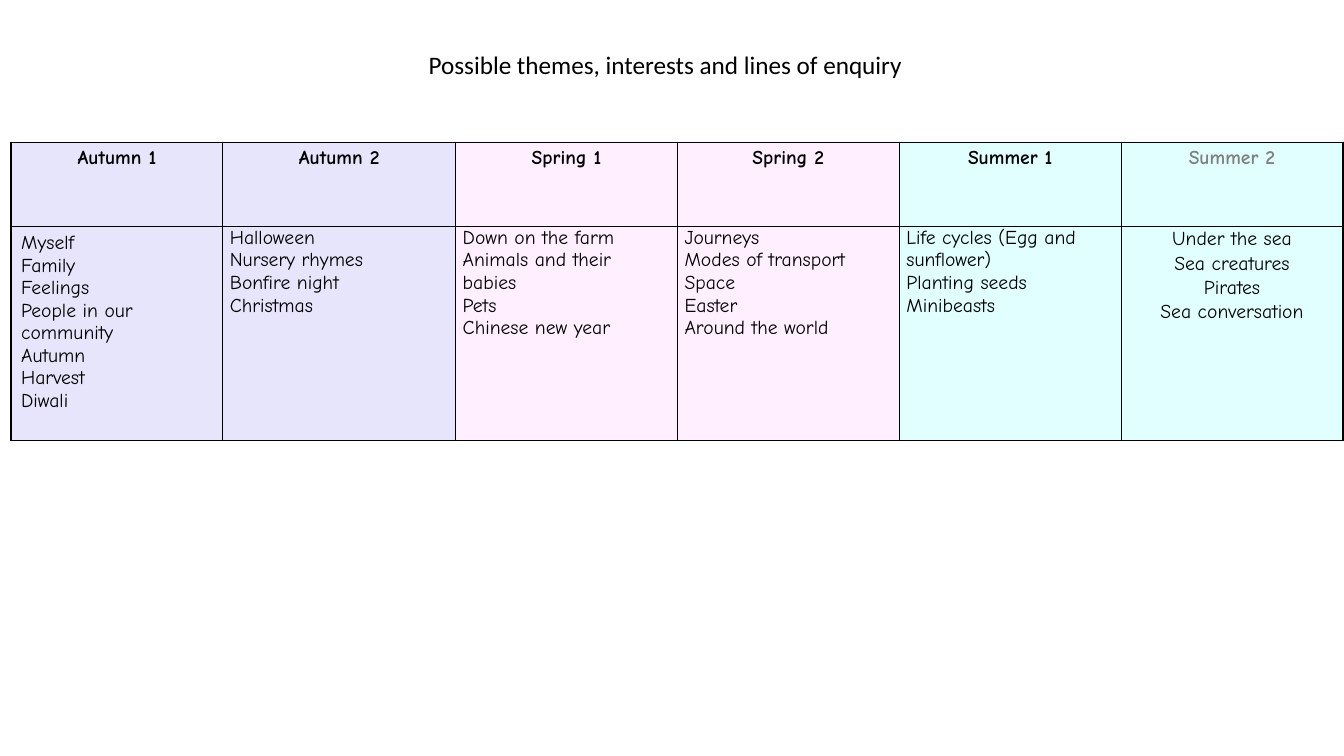
from lxml import etree
from pptx import Presentation
from pptx.dml.color import RGBColor
from pptx.enum.text import MSO_ANCHOR, PP_ALIGN
from pptx.oxml.ns import qn
from pptx.util import Inches, Pt

BLACK = RGBColor(0x00, 0x00, 0x00)
GREY = RGBColor(0x80, 0x80, 0x80)
LILAC = RGBColor(0xE6, 0xE5, 0xFB)
PINK = RGBColor(0xFF, 0xEF, 0xFF)
AQUA = RGBColor(0xE1, 0xFF, 0xFF)

COLUMN_WIDTHS = [2.1, 2.31, 2.2, 2.2, 2.2, 2.2]
ROW_HEIGHTS = [0.84, 2.12]
TERMS = [
    ("Autumn 1", LILAC, ["Myself", "Family", "Feelings", "People in our community",
                         "Autumn", "Harvest", "Diwali"]),
    ("Autumn 2", LILAC, ["Halloween", "Nursery rhymes", "Bonfire night", "Christmas"]),
    ("Spring 1", PINK, ["Down on the farm", "Animals and their babies", "Pets",
                        "Chinese new year"]),
    ("Spring 2", PINK, ["Journeys", "Modes of transport", "Space", "Easter",
                        "Around the world"]),
    ("Summer 1", AQUA, ["Life cycles (Egg and sunflower)", "Planting seeds",
                        "Minibeasts"]),
    ("Summer 2", AQUA, ["Under the sea", "Sea creatures", "Pirates",
                        "Sea conversation"]),
]


def format_paragraph(paragraph, font_name, size, color=BLACK, bold=False,
                     alignment=PP_ALIGN.LEFT):
    paragraph.alignment = alignment
    paragraph.font.name = font_name
    paragraph.font.size = Pt(size)
    paragraph.font.color.rgb = color
    paragraph.font.bold = bold


def add_borders(cell):
    properties = cell._tc.get_or_add_tcPr()
    for position, side in enumerate(("lnL", "lnR", "lnT", "lnB")):
        line = etree.Element(qn(f"a:{side}"), w=str(Pt(1)))
        fill = etree.SubElement(line, qn("a:solidFill"))
        etree.SubElement(fill, qn("a:srgbClr"), val=str(BLACK))
        properties.insert(position, line)


def fill_cell(cell, lines, background, **formatting):
    cell.fill.solid()
    cell.fill.fore_color.rgb = background
    add_borders(cell)
    cell.text = "\n".join(lines)
    for paragraph in cell.text_frame.paragraphs:
        format_paragraph(paragraph, "Comic Neue", 14, **formatting)


def add_title(slide):
    title = slide.shapes.title
    title.left, title.top = Inches(4.15), Inches(0.44)
    title.width, title.height = Inches(5.76), Inches(0.4)
    title.text_frame.text = "Possible themes, interests and lines of enquiry"
    title.text_frame.vertical_anchor = MSO_ANCHOR.TOP
    format_paragraph(title.text_frame.paragraphs[0], "Calibri", 18)


def add_themes_table(slide):
    table = slide.shapes.add_table(
        len(ROW_HEIGHTS), len(TERMS), Inches(0.11), Inches(1.41),
        Inches(sum(COLUMN_WIDTHS)), Inches(sum(ROW_HEIGHTS))).table
    table.horz_banding = False
    for column, width in zip(table.columns, COLUMN_WIDTHS):
        column.width = Inches(width)
    for row, height in zip(table.rows, ROW_HEIGHTS):
        row.height = Inches(height)

    last = len(TERMS) - 1
    for index, (term, background, themes) in enumerate(TERMS):
        fill_cell(table.cell(0, index), [term], background, bold=True,
                  color=GREY if index == last else BLACK, alignment=PP_ALIGN.CENTER)
        body = table.cell(1, index)
        fill_cell(body, themes, background,
                  alignment=PP_ALIGN.CENTER if index == last else PP_ALIGN.LEFT)
        if index > 0:
            body.margin_left = body.margin_right = Inches(0.07)
            body.margin_top = body.margin_bottom = 0
    for paragraph in table.cell(1, last).text_frame.paragraphs:
        paragraph.line_spacing = 1.07


def main():
    presentation = Presentation()
    presentation.slide_width = Inches(13.33)
    presentation.slide_height = Inches(7.5)
    slide = presentation.slides.add_slide(presentation.slide_layouts.get_by_name("Title Only"))
    add_themes_table(slide)
    add_title(slide)
    presentation.save("out.pptx")


if __name__ == "__main__":
    main()
